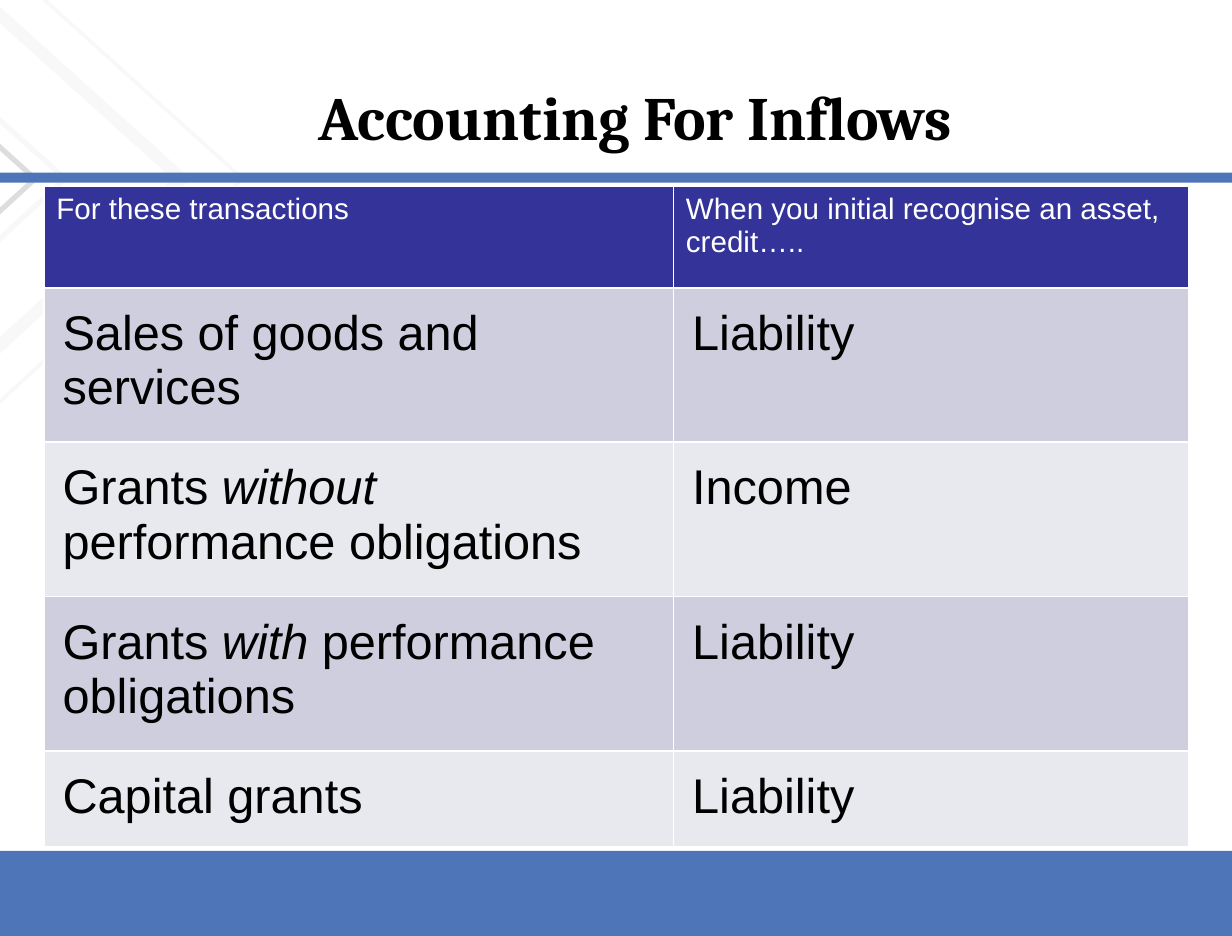
from lxml import etree
from pptx import Presentation
from pptx.dml.color import RGBColor
from pptx.enum import shapes, text
from pptx.oxml import ns
from pptx.util import Inches, Pt

COLORS = {"band": "4E75B8", "header": "333399", "odd": "CECEDE", "even": "E8E8EF",
          "grey": "DDDDDD", "pale": "F8F8F8", "white": "FFFFFF", "black": "000000"}
# The slide is 25 by 19 centimetres
WIDTH, HEIGHT = 25 / 2.54, 19 / 2.54

HEADER = ("For these transactions", "When you initial recognise an asset, credit…..")
# Each transaction is a list of (text, italic) runs
ROWS = [
    ([("Sales of goods and services", False)], "Liability"),
    ([("Grants ", False), ("without", True), (" performance obligations", False)], "Income"),
    ([("Grants ", False), ("with", True), (" performance obligations", False)], "Liability"),
    ([("Capital grants", False)], "Liability"),
]
HEADER_FORMAT = {"size": Pt(17), "name": "Arial"}
BODY_FORMAT = {"size": Pt(28), "name": "Arial"}
TITLE_FORMAT = {"size": Pt(35.4), "name": "Cambria", "bold": True}


def rgb(name):
    return RGBColor.from_string(COLORS[name])


def add_runs(p, runs, formats, color):
    for words, italic in runs:
        r = p.add_run()
        r.text = words
        for key, value in formats.items():
            setattr(r.font, key, value)
        r.font.italic = italic
        r.font.color.rgb = rgb(color)


def add_band(s, x, y, w, h):
    sp = s.shapes.add_shape(shapes.MSO_SHAPE.RECTANGLE, *map(Inches, (x, y, w, h)))
    sp.shadow.inherit = False
    sp.fill.solid()
    sp.fill.fore_color.rgb = rgb("band")
    sp.line.fill.background()


def add_chevrons(s, y, w, h):
    """Open chevrons that share one size and bleed off the left edge."""
    for x, color, weight in [(-3.95, "grey", 3), (-3.71, "pale", 3),
                             (-2.78, "pale", 7), (-2.29, "pale", 2)]:
        builder = s.shapes.build_freeform(Inches(x), Inches(y))
        builder.add_line_segments([(Inches(x + w), Inches(y + 3.82)),
                                   (Inches(x), Inches(y + h))], close=False)
        sp = builder.convert_to_shape()
        sp.shadow.inherit = False
        sp.fill.background()
        sp.line.color.rgb = rgb(color)
        sp.line.width = Pt(weight)


def add_title(s, x, y, w, h):
    tf = s.shapes.add_textbox(*map(Inches, (x, y, w, h))).text_frame
    tf.word_wrap = True
    tf.vertical_anchor = text.MSO_ANCHOR.MIDDLE
    p = tf.paragraphs[0]
    p.alignment = text.PP_ALIGN.CENTER
    add_runs(p, [("Accounting For Inflows", False)], TITLE_FORMAT, "black")


def set_borders(cell, weights):
    tc_pr = cell._tc.get_or_add_tcPr()
    for i, (side, weight) in enumerate(weights.items()):
        ln = etree.Element(ns.qn("a:ln" + side), w=str(Pt(weight)))
        fill = etree.SubElement(ln, ns.qn("a:solidFill"))
        etree.SubElement(fill, ns.qn("a:srgbClr"), val=COLORS["white"])
        tc_pr.insert(i, ln)


def fill_cell(cell, runs, formats, color, fill, margins):
    for side, margin in zip(("left", "right", "top", "bottom"), margins):
        setattr(cell, "margin_" + side, Inches(margin))
    cell.fill.solid()
    cell.fill.fore_color.rgb = rgb(fill)
    set_borders(cell, {"L": 1, "R": 1, "T": 1, "B": 1})
    add_runs(cell.text_frame.paragraphs[0], runs, formats, color)


def add_transactions(s, x, y, w, h):
    table = s.shapes.add_table(len(ROWS) + 1, 2, *map(Inches, (x, y, w, h))).table
    for column, width in zip(table.columns, (5.03, w - 5.03)):
        column.width = Inches(width)
    for row, height in zip(table.rows, (0.81, 1.21, 1.21, 1.21, 0.75)):
        row.height = Inches(height)
    # Header row
    for c, words in enumerate(HEADER):
        fill_cell(table.cell(0, c), [(words, False)], HEADER_FORMAT, "white",
                  "header", (0.1, 0.1, 0.05, 0.05))
    # Body rows in alternating shades
    for i, (transaction, credit) in enumerate(ROWS, 1):
        fill = "odd" if i % 2 else "even"
        for c, runs in enumerate((transaction, [(credit, False)])):
            fill_cell(table.cell(i, c), runs, BODY_FORMAT, "black", fill, (0.15,) * 4)


def build_slide(prs):
    s = prs.slides.add_slide(prs.slide_layouts[6])
    # Backdrop
    add_band(s, 0, 6.8, WIDTH, 0.71)
    add_chevrons(s, -2.39, 4.23, 7.7)
    add_band(s, 0, 1.38, WIDTH, 0.08)
    # Content
    add_title(s, 1.2, 0.3, 7.75, 1.25)
    add_transactions(s, 0.35, 1.49, 9.15, 5.26)


def main():
    prs = Presentation()
    prs.slide_width, prs.slide_height = Inches(WIDTH), Inches(HEIGHT)
    build_slide(prs)
    prs.save("out.pptx")


if __name__ == "__main__":
    main()
